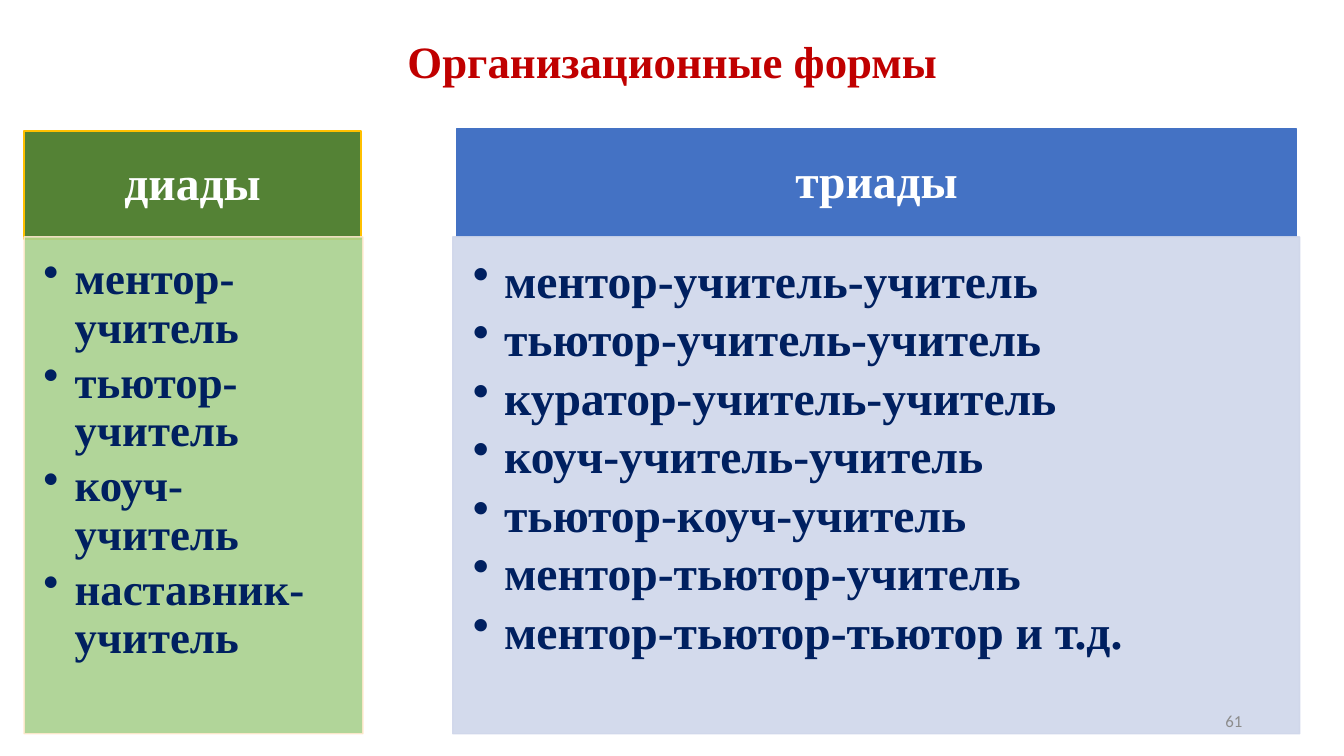
from lxml.etree import SubElement
from pptx import Presentation
from pptx.dml.color import RGBColor
from pptx.enum.shapes import MSO_SHAPE
from pptx.enum.text import MSO_ANCHOR, PP_ALIGN
from pptx.oxml.ns import qn
from pptx.util import Inches, Pt

# Colours
RED = RGBColor(0xC0, 0x00, 0x00)
NAVY = RGBColor(0x00, 0x20, 0x60)
WHITE = RGBColor(0xFF, 0xFF, 0xFF)
GREY = RGBColor(0x8C, 0x8C, 0x8C)
GREEN = RGBColor(0x54, 0x82, 0x35)
GOLD = RGBColor(0xFF, 0xC0, 0x00)
LIGHT_GREEN = RGBColor(0xA9, 0xD1, 0x8E)
CREAM = RGBColor(0xFF, 0xE8, 0xCC)
BLUE = RGBColor(0x44, 0x72, 0xC4)
LIGHT_BLUE = RGBColor(0xCF, 0xD6, 0xEA)

# Content
TITLE = "Организационные формы"
PAGE_NUMBER = "61"
COLUMNS = [
    {
        "heading": "диады",
        "heading_place": (0.24, 1.3, 3.34, 1.07),
        "heading_colours": (GREEN, GOLD),
        "items": ["ментор-учитель", "тьютор-учитель", "коуч-учитель",
                  "наставник-учитель"],
        "list_place": (0.24, 2.35, 3.36, 4.93),
        "list_colours": (LIGHT_GREEN, CREAM),
        "list_size": 32,
        "list_insets": (0.19, 0.19, 0.25, 0.28),
    },
    {
        "heading": "триады",
        "heading_place": (4.53, 1.28, 8.33, 1.07),
        "heading_colours": (BLUE, BLUE),
        "items": ["ментор-учитель-учитель", "тьютор-учитель-учитель",
                  "куратор-учитель-учитель", "коуч-учитель-учитель",
                  "тьютор-коуч-учитель", "ментор-тьютор-учитель",
                  "ментор-тьютор-тьютор и т.д."],
        "list_place": (4.49, 2.35, 8.4, 4.93),
        "list_colours": (LIGHT_BLUE, LIGHT_BLUE),
        "list_size": 34,
        "list_insets": (0.2, 0.2, 0.26, 0.3),
    },
]
HEADING_SIZE = 34
HEADING_INSETS = (0.26, 0.15, 0.26, 0.15)
BULLET_INDENT = 0.31
SERIF = "Times New Roman"


def set_all(target, values):
    for name, value in values.items():
        setattr(target, name, value)


def write(frame, lines, size, colour, align, anchor, insets=None,
          font=SERIF, bold=True, line_spacing=0.9, space_share=0):
    """Fill a text frame with one paragraph per line."""
    set_all(frame, {"word_wrap": True, "vertical_anchor": anchor})
    if insets:
        sides = ("margin_left", "margin_top", "margin_right", "margin_bottom")
        set_all(frame, dict(zip(sides, map(Inches, insets))))
    for index, line in enumerate(lines):
        para = frame.add_paragraph() if index else frame.paragraphs[0]
        set_all(para, {"alignment": align, "line_spacing": line_spacing,
                       "space_before": Pt(0),
                       "space_after": Pt(size * space_share)})
        span = para.add_run()
        span.text = line
        set_all(span.font, {"name": font, "size": Pt(size), "bold": bold})
        span.font.color.rgb = colour


def add_bullets(frame):
    for para in frame.paragraphs:
        properties = para._p.get_or_add_pPr()
        properties.set("marL", str(Inches(BULLET_INDENT)))
        properties.set("indent", str(-Inches(BULLET_INDENT)))
        SubElement(properties, qn("a:buChar")).set("char", "•")


def add_box(page, place, colours, alpha=None):
    box = page.shapes.add_shape(MSO_SHAPE.RECTANGLE, *map(Inches, place))
    box.shadow.inherit = False
    box.line.width = Pt(1)
    for fill, colour in zip((box.fill, box.line.fill), colours):
        fill.solid()
        fill.fore_color.rgb = colour
    if alpha:
        for tint in box._element.spPr.iter(qn("a:srgbClr")):
            SubElement(tint, qn("a:alpha")).set("val", str(alpha * 1000))
    return box


deck = Presentation()
deck.slide_width, deck.slide_height = Inches(13.33), Inches(7.5)
page = deck.slides.add_slide(deck.slide_layouts[5])

# Title
title = page.shapes.title
set_all(title, {"left": Inches(0.92), "top": Inches(0.18),
                "width": Inches(11.5), "height": Inches(0.9)})
write(title.text_frame, [TITLE], 32, RED, PP_ALIGN.CENTER, MSO_ANCHOR.MIDDLE)

# Columns: a heading above a bulleted list
for column in COLUMNS:
    heading = add_box(page, column["heading_place"], column["heading_colours"])
    write(heading.text_frame, [column["heading"]], HEADING_SIZE, WHITE,
          PP_ALIGN.CENTER, MSO_ANCHOR.MIDDLE, HEADING_INSETS)
    panel = add_box(page, column["list_place"], column["list_colours"], 90)
    write(panel.text_frame, column["items"], column["list_size"], NAVY,
          PP_ALIGN.LEFT, MSO_ANCHOR.TOP, column["list_insets"],
          space_share=0.15)
    add_bullets(panel.text_frame)

# Page number
number = page.shapes.add_textbox(*map(Inches, (9.42, 6.95, 3, 0.4)))
write(number.text_frame, [PAGE_NUMBER], 12, GREY, PP_ALIGN.RIGHT,
      MSO_ANCHOR.MIDDLE, font="Calibri", bold=False, line_spacing=1.0)

deck.save("out.pptx")
